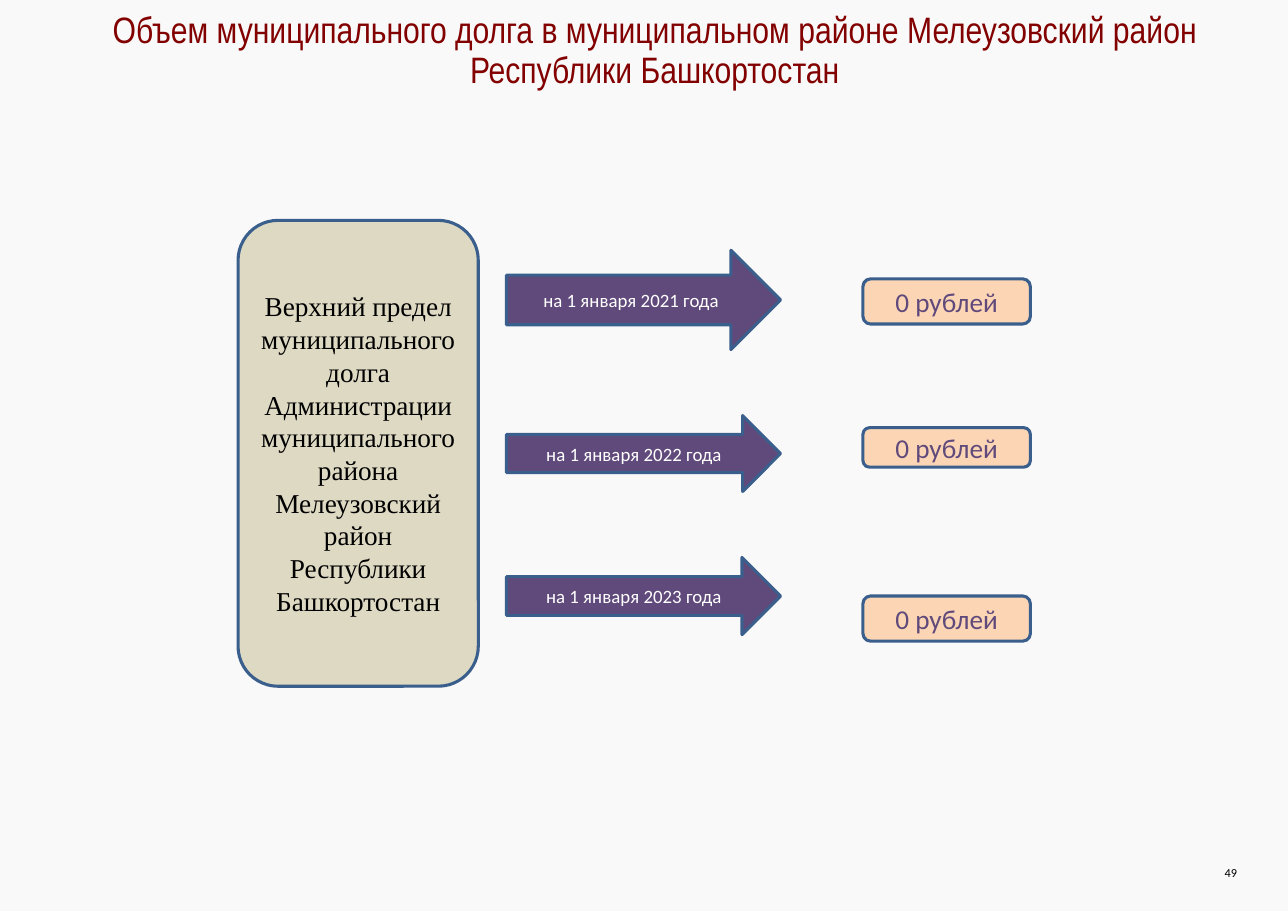
from dataclasses import dataclass

from pptx import Presentation
from pptx.dml.color import RGBColor
from pptx.enum.shapes import MSO_SHAPE as Preset
from pptx.enum.text import MSO_ANCHOR as Anchor, PP_ALIGN as Align
from pptx.util import Cm, Pt


@dataclass(frozen=True)
class Theme:
    background: str = "F9F9F9"
    outline: str = "3A5F8C"
    sand: str = "DDD9C3"
    violet: str = "604A7B"
    peach: str = "FCD5B5"
    maroon: str = "820000"
    black: str = "000000"
    white: str = "FFFFFF"
    sans: str = "Calibri"
    serif: str = "Times New Roman"
    narrow: str = "Arial Narrow"
    title_size: float = 24
    body_size: float = 17.8
    date_size: float = 12.3
    number_size: float = 8
    outline_width: float = 2


class DebtSlide:
    def __init__(self, presentation, theme):
        self.theme = theme
        self.slide = presentation.slides.add_slide(presentation.slide_layouts[6])
        background = self.slide.background.fill
        background.solid()
        background.fore_color.rgb = RGBColor.from_string(theme.background)

    def set_text(self, frame, text, font_name, size, color):
        frame.word_wrap = True
        frame.text = text
        paragraph = frame.paragraphs[0]
        paragraph.alignment = Align.CENTER
        font = paragraph.runs[0].font
        font.name = font_name
        font.size = Pt(size)
        font.color.rgb = RGBColor.from_string(color)
        return paragraph

    def block(self, preset, box, fill, text, font_name, size, color):
        block = self.slide.shapes.add_shape(preset, *map(Cm, box))
        block.shadow.inherit = False
        block.fill.solid()
        block.fill.fore_color.rgb = RGBColor.from_string(fill)
        block.line.color.rgb = RGBColor.from_string(self.theme.outline)
        block.line.width = Pt(self.theme.outline_width)
        block.text_frame.vertical_anchor = Anchor.MIDDLE
        self.set_text(block.text_frame, text, font_name, size, color)

    def limit(self, box, text):
        theme = self.theme
        self.block(Preset.ROUNDED_RECTANGLE, box, theme.sand, text,
                   theme.serif, theme.body_size, theme.black)

    def date(self, box, text):
        theme = self.theme
        self.block(Preset.RIGHT_ARROW, box, theme.violet, text,
                   theme.sans, theme.date_size, theme.white)

    def amount(self, box, text):
        theme = self.theme
        self.block(Preset.ROUNDED_RECTANGLE, box, theme.peach, text,
                   theme.sans, theme.body_size, theme.violet)

    def label(self, box, text, font_name, size, color, anchor):
        frame = self.slide.shapes.add_textbox(*map(Cm, box)).text_frame
        frame.margin_left = frame.margin_right = 0
        frame.margin_top = frame.margin_bottom = 0
        frame.vertical_anchor = anchor
        return self.set_text(frame, text, font_name, size, color)

    def title(self, box, text):
        theme = self.theme
        heading = self.label(box, text, theme.narrow, theme.title_size,
                             theme.maroon, Anchor.TOP)
        heading.line_spacing = 0.9

    def number(self, box, text):
        theme = self.theme
        self.label(box, text, theme.sans, theme.number_size,
                   theme.black, Anchor.MIDDLE)


def main():
    presentation = Presentation()
    presentation.slide_width = Cm(29.7)
    presentation.slide_height = Cm(21)
    debt = DebtSlide(presentation, Theme())

    debt.limit((5.49, 5.08, 5.54, 10.74),
               "Верхний предел муниципального долга Администрации "
               "муниципального района Мелеузовский район "
               "Республики Башкортостан")

    forecasts = [
        (2021, 5.77, 2.29, 6.43, 1.04),
        (2022, 9.58, 1.75, 9.86, 0.91),
        (2023, 12.85, 1.78, 13.74, 1.04),
    ]
    for year, date_top, date_height, amount_top, amount_height in forecasts:
        debt.date((11.68, date_top, 6.32, date_height), f"на 1 января {year} года")
        debt.amount((19.9, amount_top, 3.86, amount_height), "0 рублей")

    debt.title((1.37, 0.27, 27.46, 1.88),
               "Объем муниципального долга в муниципальном районе "
               "Мелеузовский район Республики Башкортостан")
    debt.number((27.99, 19.81, 0.79, 0.61), "49")
    presentation.save("out.pptx")


if __name__ == "__main__":
    main()
